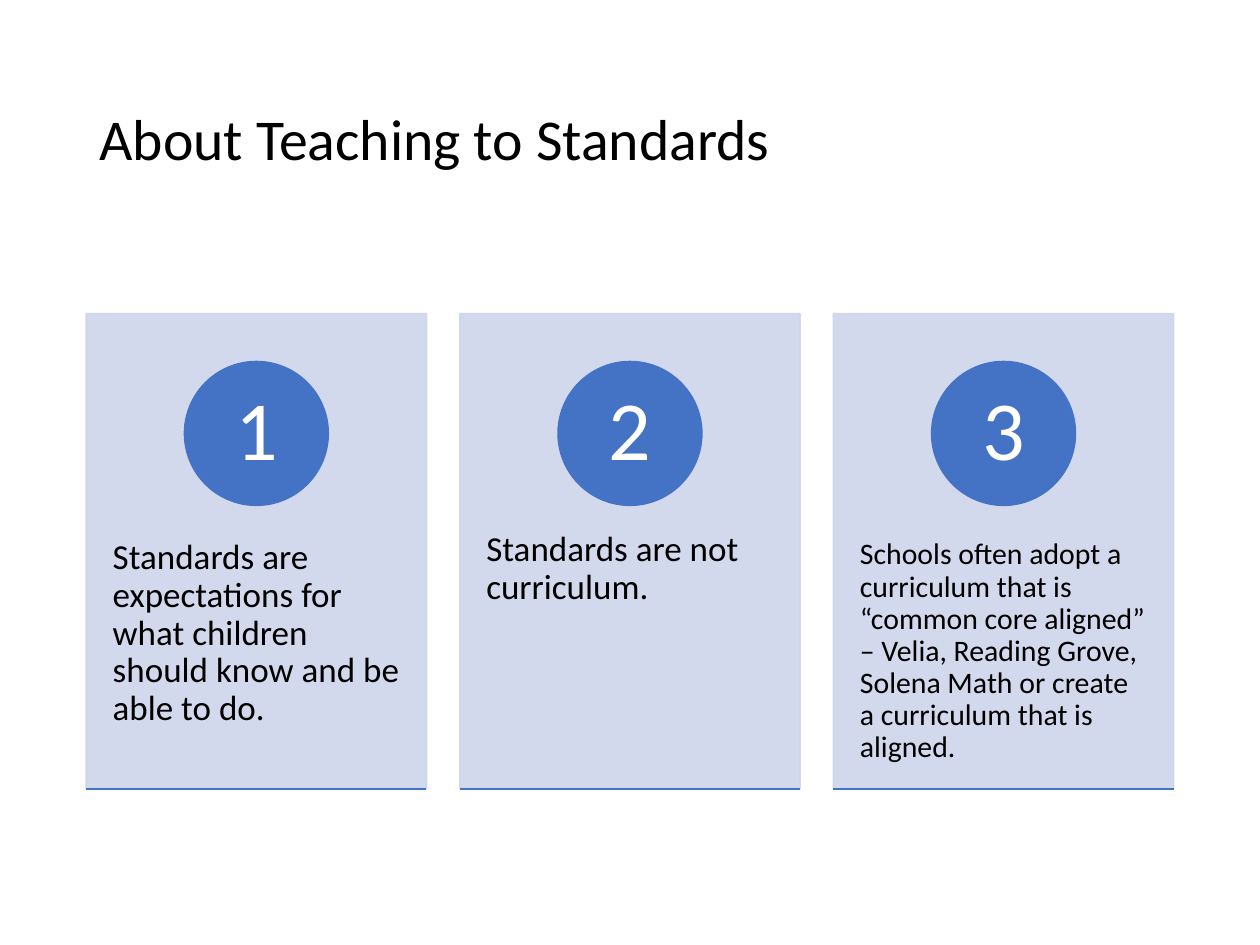
from lxml.etree import SubElement as Sub
from pptx import Presentation as Deck
from pptx.dml.color import RGBColor as Rgb
from pptx.enum.shapes import MSO_CONNECTOR as Link, MSO_SHAPE as Form
from pptx.enum.text import MSO_ANCHOR as Anchor, PP_ALIGN as Align
from pptx.oxml.ns import qn
from pptx.util import Inches, Pt


def tint(color, code):
    color.rgb = Rgb.from_string(code)


def fade(shape, share):
    for node in shape._element.spPr.iter(qn("a:srgbClr")):
        Sub(node, qn("a:alpha"), val=str(share * 1000))


class Page:
    """Draws styled elements on one slide with a grid of 100 columns by 75 rows."""

    font, ink, blue, pale, white = "Calibri", "000000", "4472C4", "CFD5EA", "FFFFFF"
    cols, rows = 100, 75

    def __init__(self, deck):
        self.wide, self.high = deck.slide_width, deck.slide_height
        self.slide = deck.slides.add_slide(deck.slide_layouts[6])
        self.shapes = self.slide.shapes
        back = self.slide.background.fill
        back.solid()
        tint(back.fore_color, self.white)

    def place(self, x, y, w, h):
        dx, dy = self.wide / self.cols, self.high / self.rows
        return int(x * dx), int(y * dy), int(w * dx), int(h * dy)

    def label(self, shape, text, size, code, inset, anchor, align=Align.LEFT):
        frame = shape.text_frame
        frame.word_wrap = True
        frame.vertical_anchor = anchor
        side, edge = map(Inches, inset)
        frame.margin_left = frame.margin_right = side
        frame.margin_top = frame.margin_bottom = edge
        para = frame.paragraphs[0]
        para.alignment, para.line_spacing = align, 0.9
        run = para.add_run()
        run.text = text
        run.font.name, run.font.size = self.font, Pt(size)
        tint(run.font.color, code)

    def text(self, box, text, size, inset, anchor=Anchor.TOP):
        shape = self.shapes.add_textbox(*self.place(*box))
        self.label(shape, text, size, self.ink, inset, anchor)

    def shape(self, form, box, code, share=100):
        shape = self.shapes.add_shape(form, *self.place(*box))
        shape.shadow.inherit = False
        shape.fill.solid()
        tint(shape.fill.fore_color, code)
        shape.line.width = Pt(1)
        tint(shape.line.color, code)
        if share < 100:
            fade(shape, share)
        return shape

    def badge(self, box, text):
        disc = self.shape(Form.OVAL, box, self.blue)
        self.label(disc, text, 48, self.white, (0.09, 0.01), Anchor.MIDDLE, Align.CENTER)

    def rule(self, x, y, w):
        left, top, width, _ = self.place(x, y, w, 0)
        line = self.shapes.add_connector(Link.STRAIGHT, left, top, left + width, top)
        line.line.width = Pt(1)
        tint(line.line.color, self.blue)
        Sub(line._element.spPr, qn("a:effectLst"))

    def card(self, x, mark, text, size):
        top, wide, high, disc = 24.9, 27, 37.7, 11.4
        self.shape(Form.RECTANGLE, (x, top, wide, high), self.pale, 90)
        self.text((x, 39.2, wide, 22.6), text, size, (0.21, 0.36))
        self.badge((x + (wide - disc) / 2, 28.7, disc, disc), mark)
        self.rule(x, top + high, wide)


def main():
    deck = Deck()
    deck.slide_width, deck.slide_height = Inches(10), Inches(7.5)
    page = Page(deck)
    page.text((6.9, 4, 86.2, 14.5), "About Teaching to Standards", 33, (0.1, 0.05), Anchor.MIDDLE)
    cards = [
        ("Standards are expectations for what children should know and be able to do.", 20),
        ("Standards are not curriculum.", 20),
        ("Schools often adopt a curriculum that is “common core aligned” – Velia, Reading Grove, "
         "Solena Math or create a curriculum that is aligned.", 17),
    ]
    for i, (text, size) in enumerate(cards):
        page.card(6.85 + 29.65 * i, str(i + 1), text, size)
    deck.save("out.pptx")


if __name__ == "__main__":
    main()
